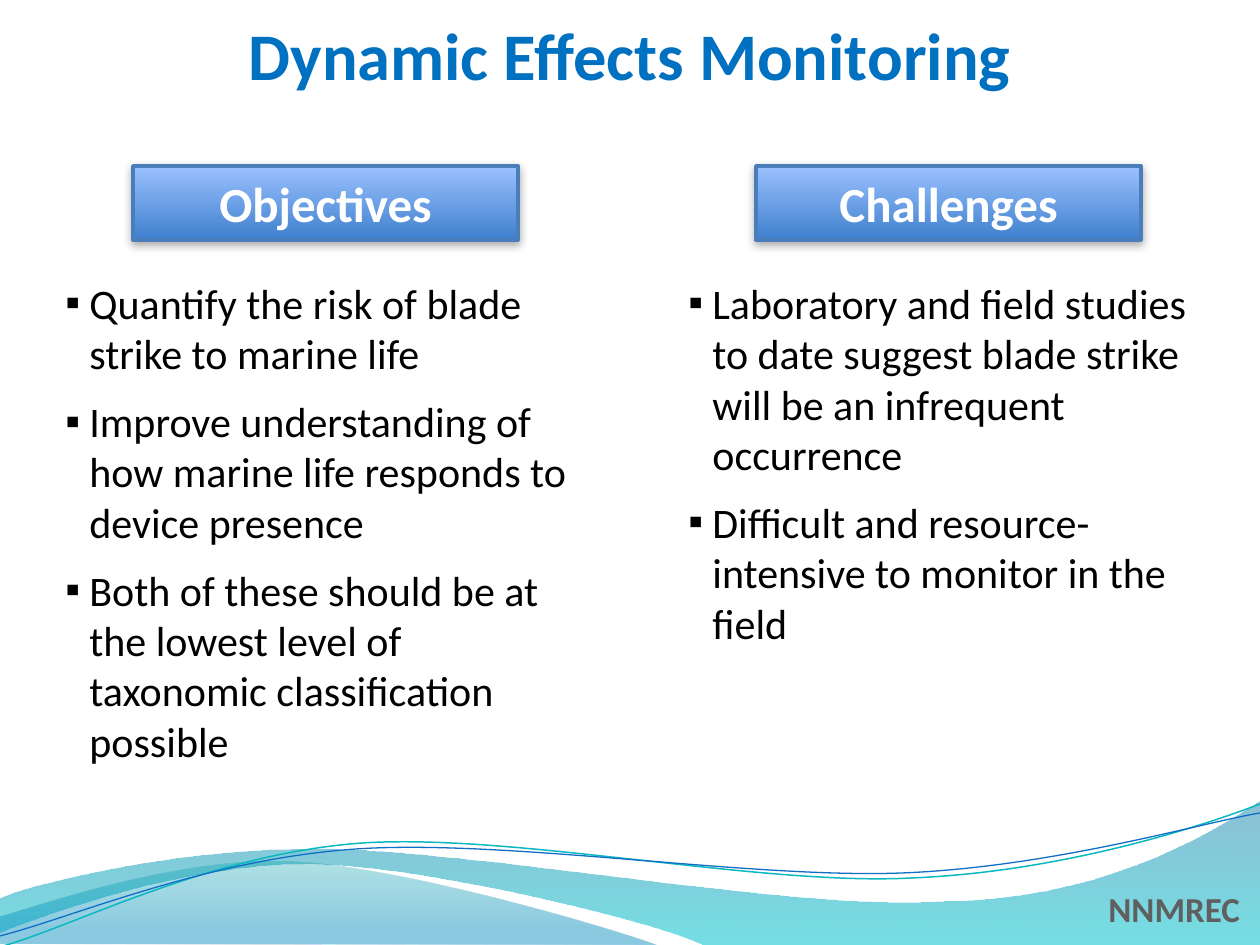
from lxml import etree
from pptx import Presentation
from pptx.dml.color import RGBColor
from pptx.enum.shapes import MSO_SHAPE
from pptx.enum.text import MSO_ANCHOR, PP_ALIGN
from pptx.oxml.ns import qn
from pptx.util import Pt

RECTANGLE = MSO_SHAPE.RECTANGLE
LEFT, CENTER = PP_ALIGN.LEFT, PP_ALIGN.CENTER
TOP, MIDDLE = MSO_ANCHOR.TOP, MSO_ANCHOR.MIDDLE

SCALE = 914400 / 126
SLIDE_WIDTH, SLIDE_HEIGHT = 1260, 945
FONT, BULLET_FONT = "Calibri", "Arial"
COLORS = {
    "title": "0070C0", "body": "000000", "heading": "FFFFFF", "footer": "5F5F5F",
    "button_bottom": "3F80CD", "button_top": "9BC1FF", "button_edge": "4A7EBB",
    "sea_top": "0074A1", "sea_bottom": "00C6CF",
    "hill_top": "00A1A9", "hill_bottom": "008BBF",
    "teal_line": "0AB8BF", "blue_line": "0F6FC6", "shadow": "000000",
}

TITLE = "Dynamic Effects Monitoring"
FOOTER = "NNMREC"
COLUMNS = [
    ("Objectives", 507, [
        "Quantify the risk of blade strike to marine life",
        "Improve understanding of how marine life responds to device presence",
        "Both of these should be at the lowest level of taxonomic classification possible",
    ]),
    ("Challenges", 387, [
        "Laboratory and field studies to date suggest blade strike will be an infrequent occurrence",
        "Difficult and resource-intensive to monitor in the field",
    ]),
]
COLUMN_LEFT, COLUMN_STEP, COLUMN_WIDTH = 53, 623, 546
BUTTON_INSET, BUTTON_TOP, BUTTON_WIDTH, BUTTON_HEIGHT = 80, 166, 385, 74
BULLETS_TOP, BULLET_INDENT = 271, 24

WAVES = [
    {"segments": [
        [(1260, 945)], [(706, 945)],
        [(660, 922), (423, 864), (304, 864)], [(185, 864), (52, 912), (0, 932)],
        [(-1, 898)],
        [(20, 888), (164, 848), (320, 849)], [(476, 849), (779, 908), (936, 901)],
        [(1097, 900), (1202, 839), (1261, 801)]],
     "stops": [(0, "sea_top", 45), (100, "sea_bottom", 55)]},
    {"segments": [
        [(656, 945)],
        [(617, 930), (401, 866), (291, 862)], [(181, 857), (48, 903), (0, 917)],
        [(0, 944)]],
     "stops": [(0, "hill_top", 30), (80, "hill_bottom", 45)]},
    {"segments": [
        [(1260, 804)],
        [(1200, 827), (1061, 872), (911, 878)], [(761, 886), (513, 833), (362, 843)],
        [(210, 854), (77, 925), (3, 946)]],
     "line": ("teal_line", 0.85)},
    {"segments": [
        [(1260, 813)],
        [(1201, 823), (1053, 867), (903, 873)], [(752, 879), (507, 839), (357, 849)],
        [(207, 859), (74, 917), (0, 936)]],
     "line": ("blue_line", 0.75)},
]


def px(value):
    return round(value * SCALE)


def rgb(name):
    return RGBColor.from_string(COLORS[name])


def fill_gradient(shape, stops, angle):
    shape.fill.gradient()
    shape.fill.gradient_angle = angle
    for stop, (position, color, _) in zip(shape.fill.gradient_stops, stops):
        stop.position = position / 100
        stop.color.rgb = rgb(color)
    colors = shape._element.spPr.iter(qn("a:srgbClr"))
    for element, (_, _, opacity) in zip(colors, stops):
        if opacity < 100:
            etree.SubElement(element, qn("a:alpha"), val=str(opacity * 1000))


def set_line(shape, color, width):
    shape.line.color.rgb = rgb(color)
    shape.line.width = Pt(width)


def bend(shape, segments):
    steps = iter(list(shape._element.spPr.iter(qn("a:lnTo"))))
    for segment in segments[1:]:
        parts = [next(steps) for _ in segment]
        if len(parts) == 3:
            curve = etree.Element(qn("a:cubicBezTo"))
            parts[0].addprevious(curve)
            for part in parts:
                curve.append(part[0])
                part.getparent().remove(part)


def add_wave(shapes, segments, stops=None, line=None):
    points = [(px(x), px(y)) for segment in segments for x, y in segment]
    builder = shapes.build_freeform(*points[0])
    builder.add_line_segments(points[1:], close=line is None)
    wave = builder.convert_to_shape()
    bend(wave, segments)
    wave.shadow.inherit = False
    if line:
        wave.fill.background()
        set_line(wave, *line)
    else:
        fill_gradient(wave, stops, 270)
        wave.line.fill.background()


def add_shadow(shape):
    shape.shadow.inherit = False
    effects = shape._element.spPr.find(qn("a:effectLst"))
    shadow = etree.SubElement(effects, qn("a:outerShdw"), blurRad=str(Pt(5)),
                              dist=str(Pt(1.8)), dir="5400000", rotWithShape="0")
    color = etree.SubElement(shadow, qn("a:srgbClr"), val=COLORS["shadow"])
    etree.SubElement(color, qn("a:alpha"), val="35000")


def write(shape, texts, *, size, color, bold=False, align=LEFT, anchor=TOP,
          wrap=True, margin=None, bullet=None, after=0):
    frame = shape.text_frame
    frame.word_wrap = wrap
    frame.vertical_anchor = anchor
    if margin is not None:
        frame.margin_left = frame.margin_right = margin
        frame.margin_top = frame.margin_bottom = margin
    for index, text in enumerate(texts):
        paragraph = frame.paragraphs[0] if index == 0 else frame.add_paragraph()
        paragraph.alignment = align
        paragraph.space_after = Pt(after)
        if bullet:
            properties = paragraph._p.get_or_add_pPr()
            properties.set("marL", str(px(BULLET_INDENT)))
            properties.set("indent", str(-px(BULLET_INDENT)))
            etree.SubElement(properties, qn("a:buFont"), typeface=BULLET_FONT)
            etree.SubElement(properties, qn("a:buChar"), char=bullet)
        run = paragraph.add_run()
        run.text = text
        run.font.name = FONT
        run.font.size = Pt(size)
        run.font.bold = bold
        run.font.color.rgb = rgb(color)


def add_text(shapes, box, texts, **style):
    write(shapes.add_textbox(*map(px, box)), texts, **style)


def add_button(shapes, box, heading):
    button = shapes.add_shape(RECTANGLE, *map(px, box))
    fill_gradient(button, [(0, "button_bottom", 100), (100, "button_top", 100)], 90)
    set_line(button, "button_edge", 2)
    add_shadow(button)
    write(button, [heading], size=28, color="heading", bold=True,
          align=CENTER, anchor=MIDDLE)


def main():
    presentation = Presentation()
    presentation.slide_width, presentation.slide_height = px(SLIDE_WIDTH), px(SLIDE_HEIGHT)
    shapes = presentation.slides.add_slide(presentation.slide_layouts[6]).shapes

    for wave in WAVES:
        add_wave(shapes, **wave)
    add_text(shapes, (1096, 881, 158, 55), [FOOTER], size=20, color="footer",
             bold=True, wrap=False)
    add_text(shapes, (0, 14, SLIDE_WIDTH, 81), [TITLE], size=38, color="title",
             bold=True, align=CENTER, margin=0)
    for index, (heading, height, points) in enumerate(COLUMNS):
        left = COLUMN_LEFT + index * COLUMN_STEP
        add_text(shapes, (left, BULLETS_TOP, COLUMN_WIDTH, height), points,
                 size=24, color="body", bullet="▪", after=10)
        add_button(shapes, (left + BUTTON_INSET, BUTTON_TOP, BUTTON_WIDTH, BUTTON_HEIGHT),
                   heading)
    presentation.save("out.pptx")


if __name__ == "__main__":
    main()
